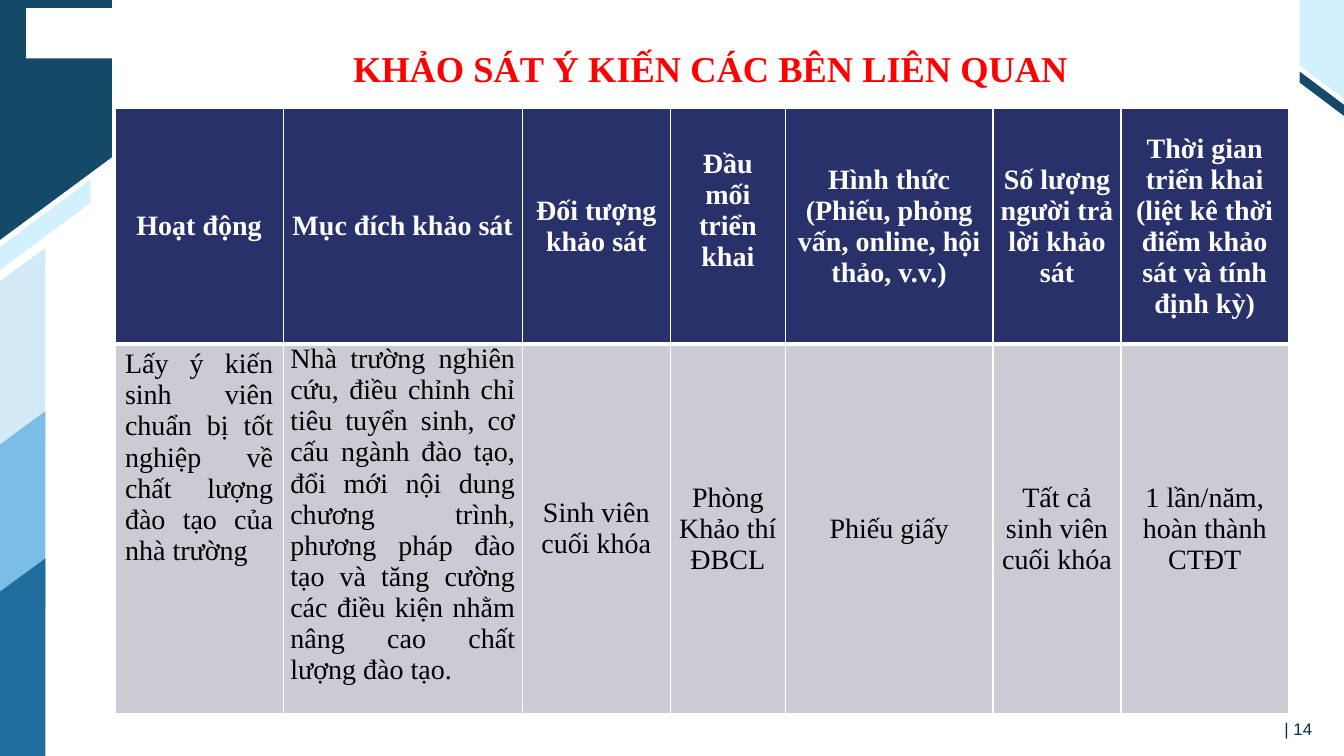
from lxml import etree
from pptx import Presentation
from pptx import util as u
from pptx.dml.color import RGBColor
from pptx.enum import shapes, text
from pptx.oxml.ns import qn

WHITE = RGBColor(0xFF, 0xFF, 0xFF)
BLACK = RGBColor(0, 0, 0)
RED = RGBColor(0xFF, 0, 0)
INK = RGBColor(0x01, 0x2E, 0x45)
NAVY = RGBColor(0x28, 0x31, 0x6A)
GREY = RGBColor(0xCB, 0xCC, 0xD3)
TEAL = RGBColor(0x14, 0x49, 0x67)
ICE = RGBColor(0xD2, 0xF0, 0xFE)
BAND_COLORS = [RGBColor(0xD2, 0xE9, 0xF6), RGBColor(0x7A, 0xBD, 0xE5),
               RGBColor(0x1E, 0x6D, 0x9C)]

WIDTH, HEIGHT = 13.33, 7.5
SERIF, SANS = "Times New Roman", "Arial"
CENTER, JUSTIFY = text.PP_ALIGN.CENTER, text.PP_ALIGN.JUSTIFY
MIDDLE, TOP = text.MSO_ANCHOR.MIDDLE, text.MSO_ANCHOR.TOP

TITLE = "KHẢO SÁT Ý KIẾN CÁC BÊN LIÊN QUAN"
PAGE_NUMBER = "| 14"
HEADER = [
    "Hoạt động",
    "Mục đích khảo sát",
    "Đối tượng khảo sát",
    "Đầu mối triển khai",
    "Hình thức (Phiếu, phỏng vấn, online, hội thảo, v.v.)",
    "Số lượng người trả lời khảo sát",
    "Thời gian triển khai\n(liệt kê thời điểm khảo sát và tính định kỳ)",
]
SURVEY = [
    "Lấy ý kiến sinh viên chuẩn bị tốt nghiệp về chất lượng đào tạo của nhà trường",
    "Nhà trường nghiên cứu, điều chỉnh chỉ tiêu tuyển sinh, cơ cấu ngành đào tạo, "
    "đổi mới nội dung chương trình, phương pháp đào tạo và tăng cường các điều kiện "
    "nhằm nâng cao chất lượng đào tạo.",
    "Sinh viên cuối khóa",
    "Phòng Khảo thí ĐBCL",
    "Phiếu giấy",
    "Tất cả sinh viên cuối khóa",
    "1 lần/năm, hoàn thành CTĐT",
]
COLUMNS = [1.67, 2.37, 1.47, 1.14, 2.06, 1.27, 1.66]
ROWS = [2.33, 3.49]
TABLE_LEFT, TABLE_TOP = 1.14, 1.08
RAISED_COLUMN, RAISED_MARGIN = 3, 0.31

EDGE = 12.89
CORNER = [(0, 0), (1.11, 0), (1.11, 1.56), (0, 2.38)]
LEFT_STRIPE = [(0.9, 1.78), (0.9, 2.01), (0, 2.68), (0, 2.45)]
RIGHT_STRIPE = [(EDGE, 0.71), (WIDTH, 1.04), (WIDTH, 1.15), (EDGE, 0.82)]
RIGHT_CORNER = [(EDGE, 0), (WIDTH, 0), (WIDTH, 0.98), (EDGE, 0.65)]
BAND_TOPS = [2.46, 4.08, 5.54]
BAND_WIDTH, BAND_HEIGHT, BAND_SLANT = 0.45, 1.96, 0.33


def paint(shape, color):
    shape.shadow.inherit = False
    shape.fill.solid()
    shape.fill.fore_color.rgb = color
    shape.line.fill.background()


def add_polygon(page, points, color):
    start, *others = [(u.Inches(x), u.Inches(y)) for x, y in points]
    builder = page.shapes.build_freeform(*start)
    builder.add_line_segments(others)
    paint(builder.convert_to_shape(), color)


def write(frame, content, size, color, font=SERIF, bold=False, align=CENTER):
    frame.word_wrap = True
    frame.text = content
    for para in frame.paragraphs:
        para.alignment = align
        for span in para.runs:
            span.font.name = font
            span.font.size = u.Pt(size)
            span.font.bold = bold
            span.font.color.rgb = color


def set_margins(target, left, top, right, bottom):
    target.margin_left, target.margin_top = u.Inches(left), u.Inches(top)
    target.margin_right, target.margin_bottom = u.Inches(right), u.Inches(bottom)


def add_borders(cell, widths):
    """Draw white borders; widths are points by side, placed ahead of the fill."""
    properties = cell._tc.get_or_add_tcPr()
    for position, (side, width) in enumerate(widths.items()):
        line = etree.Element(qn("a:ln" + side), w=str(u.Pt(width)))
        fill = etree.SubElement(line, qn("a:solidFill"))
        etree.SubElement(fill, qn("a:srgbClr"), val=str(WHITE))
        properties.insert(position, line)


def add_decorations(page):
    add_polygon(page, CORNER, TEAL)
    add_polygon(page, LEFT_STRIPE, ICE)
    notch = page.shapes.add_shape(shapes.MSO_SHAPE.RECTANGLE, u.Inches(0.26),
                                  u.Inches(0.08), u.Inches(1.79), u.Inches(0.5))
    paint(notch, WHITE)
    for top, color in zip(BAND_TOPS, BAND_COLORS):
        bottom = top + BAND_HEIGHT
        add_polygon(page, [(0, top + BAND_SLANT), (BAND_WIDTH, top),
                           (BAND_WIDTH, bottom), (0, bottom)], color)
    add_polygon(page, RIGHT_STRIPE, TEAL)
    add_polygon(page, RIGHT_CORNER, ICE)


def add_survey_table(page):
    frame = page.shapes.add_table(len(ROWS), len(COLUMNS), u.Inches(TABLE_LEFT),
                                  u.Inches(TABLE_TOP), u.Inches(sum(COLUMNS)),
                                  u.Inches(sum(ROWS)))
    table = frame.table
    for column, width in zip(table.columns, COLUMNS):
        column.width = u.Inches(width)
    for row, height in zip(table.rows, ROWS):
        row.height = u.Inches(height)
    for r, contents in enumerate([HEADER, SURVEY]):
        is_header = r == 0
        for c, content in enumerate(contents):
            cell = table.cell(r, c)
            long_text = not is_header and c < 2
            write(cell.text_frame, content, 20, WHITE if is_header else BLACK,
                  bold=is_header, align=JUSTIFY if long_text else CENTER)
            cell.vertical_anchor = TOP if long_text else MIDDLE
            if c == 0:
                set_margins(cell, 0.1, 0.05, 0.1, 0.05)
            else:
                raised = is_header and c == RAISED_COLUMN
                set_margins(cell, 0.07, 0, 0.07, RAISED_MARGIN if raised else 0)
            cell.fill.solid()
            cell.fill.fore_color.rgb = NAVY if is_header else GREY
            add_borders(cell, {"L": 1, "R": 1, "T": 1 if is_header else 3,
                               "B": 3 if is_header else 1})


def add_label(page, left, top, width, height):
    box = page.shapes.add_textbox(u.Inches(left), u.Inches(top),
                                  u.Inches(width), u.Inches(height))
    return box.text_frame


def main():
    deck = Presentation()
    deck.slide_width, deck.slide_height = u.Inches(WIDTH), u.Inches(HEIGHT)
    page = deck.slides.add_slide(deck.slide_layouts[6])
    add_decorations(page)

    number = add_label(page, 12.67, 7.08, 0.67, 0.3)
    write(number, PAGE_NUMBER, 12, INK, font=SANS, align=text.PP_ALIGN.LEFT)
    set_margins(number, 0.07, 0.05, 0.1, 0.05)

    title = add_label(page, 1.44, 0.25, 11.22, 0.84)
    write(title, TITLE, 26, RED, bold=True)
    title.vertical_anchor = MIDDLE

    add_survey_table(page)
    deck.save("out.pptx")


if __name__ == "__main__":
    main()
